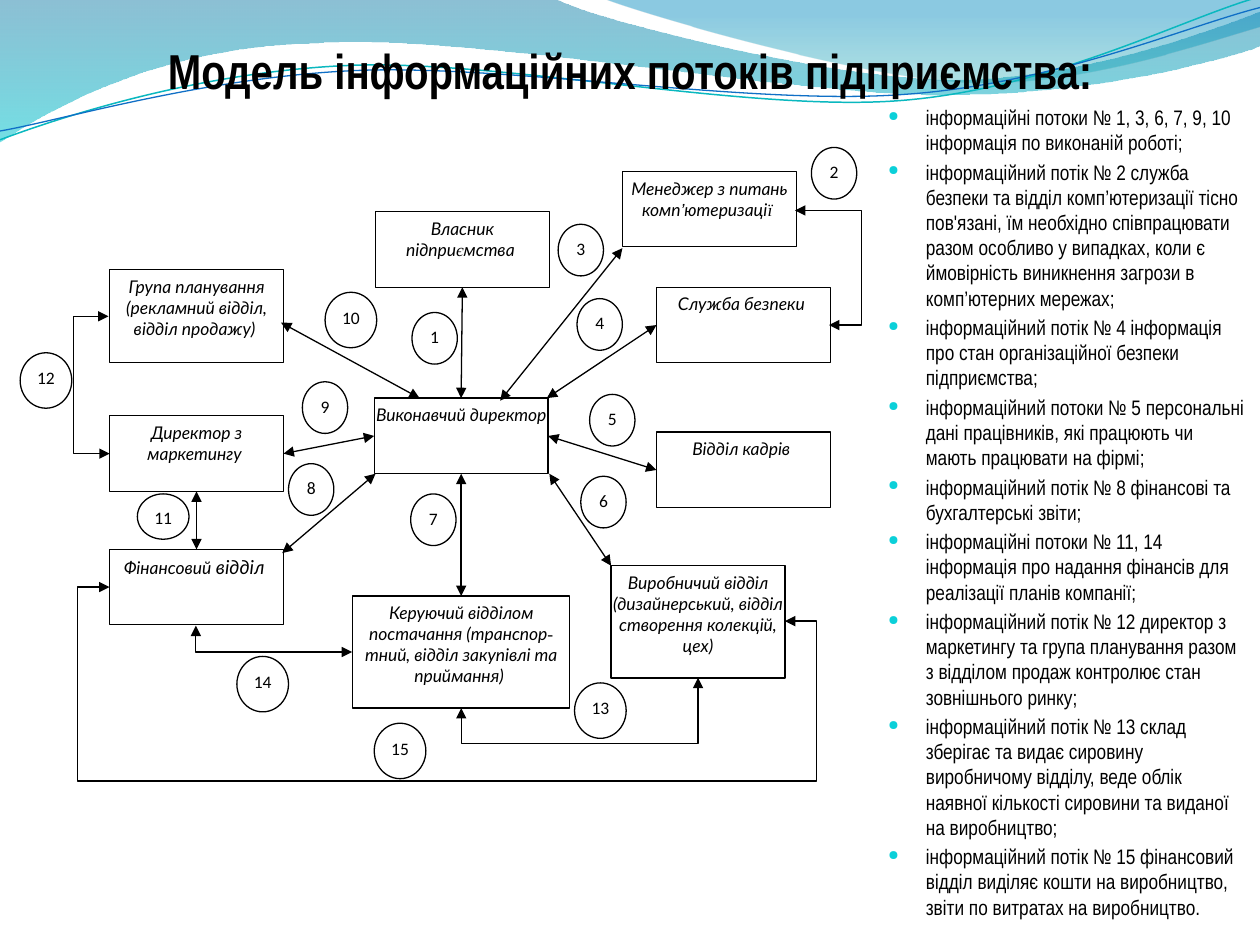
from dataclasses import dataclass
from typing import Union

from pptx import Presentation
from pptx.dml.color import RGBColor
from pptx.enum.lang import MSO_LANGUAGE_ID as Language
from pptx.enum.shapes import MSO_CONNECTOR as Link, MSO_SHAPE as Preset
from pptx.enum.text import MSO_ANCHOR as Anchor, PP_ALIGN as Align
from pptx.oxml.ns import qn
from pptx.oxml.xmlchemy import OxmlElement
from pptx.util import Inches, Pt

BLACK, WHITE = "000000", "FFFFFF"
TOP, LEFT, BOTTOM, RIGHT = range(4)


@dataclass
class Span:
    text: str
    font: str = "Lato"
    size: float = 10


@dataclass
class Unit:
    left: float
    top: float
    spans: list
    width: float = 1.38
    height: float = 0.6


@dataclass
class Elbow:
    left: float
    top: float
    width: float
    height: float
    rotation: int
    flips: str
    preset: str
    bends: tuple = ()


@dataclass
class Wave:
    start: tuple
    segments: list
    line: str = ""
    weight: float = 0
    stops: tuple = ()


End = Union[tuple[str, int], tuple[float, float]]

WAVES = [
    Wave((0, 0), [(4.4, -0.01), (4.76, 0.17, 6.64, 0.63, 7.58, 0.63), (8.53, 0.63, 9.58, 0.26, 10, 0.09),
                  (10.01, 0.36), (9.83, 0.44, 8.7, 0.76, 7.46, 0.75), (6.22, 0.75, 3.82, 0.28, 2.57, 0.34),
                  (1.29, 0.36, 0.46, 0.83, -0.01, 1.13)],
         stops=((0, "0074A1", 45), (1, "00C6CF", 55))),
    Wave((4.79, -0.01), [(5.09, 0.11, 6.82, 0.62, 7.69, 0.65), (8.56, 0.69, 9.61, 0.32, 10, 0.21), (10, 0)],
         stops=((0.2, "008BBF", 45), (1, "00A1A9", 30))),
    Wave((0, 1.11), [(0.48, 0.93, 1.58, 0.57, 2.77, 0.52), (3.95, 0.47, 5.93, 0.89, 7.13, 0.8),
                     (8.33, 0.71, 9.38, 0.15, 9.98, -0.02)], "0AB8BF", 0.85),
    Wave((0, 1.04), [(0.47, 0.96, 1.64, 0.61, 2.83, 0.56), (4.03, 0.51, 5.97, 0.84, 7.17, 0.75),
                     (8.36, 0.67, 9.41, 0.21, 10, 0.06)], "0F6FC6", 0.75),
]
UNITS = {
    "computing": Unit(4.94, 1.36, [Span("Менеджер з питань комп"), Span("’", "Arial"), Span("ютеризаці"),
                                   Span("ї ", "Times New Roman")]),
    "production": Unit(4.85, 4.49, [Span("Виробничий відділ (дизайнерський, відділ створення колекцій, цех)")],
                       height=0.89),
    "executive": Unit(2.97, 3.16, [Span("Виконавчий директор ")]),
    "owner": Unit(2.98, 1.68, [Span("Власник підпри"), Span("є", "Times New Roman"), Span("мства ")]),
    "security": Unit(5.21, 2.28, [Span("Служба безпеки ")]),
    "supply": Unit(2.8, 4.73, [Span("Керуючий відділом постачання (транспор"), Span("-", "Times New Roman"),
                               Span("тний, відділ закупівлі та приймання) ")], 1.72, 0.89),
    "staff": Unit(5.21, 3.43, [Span("Відділ кадрів ")]),
    "finance": Unit(0.87, 4.36, [Span("Фінансовий"), Span(" відділ ", size=11)]),
    "marketing": Unit(0.87, 3.3, [Span("Директор з маркетингу ")]),
    "planning": Unit(0.87, 2.14, [Span("Група планування (рекламний відділ, відділ продажу) ")], height=0.74),
}
FLOWS: list[tuple[End, End]] = [
    (("owner", BOTTOM), ("executive", TOP)),
    (("marketing", RIGHT), ("executive", LEFT)),
    ((2.23, 2.56), (3.33, 3.16)),
    ((2.98, 3.76), (2.24, 4.39)),
    (("executive", BOTTOM), ("supply", TOP)),
    ((4.36, 3.76), (4.85, 4.49)),
    (("staff", LEFT), ("executive", RIGHT)),
    ((4.94, 1.97), (3.97, 3.18)),
    (("security", LEFT), (4.34, 3.16)),
    (("marketing", BOTTOM), ("finance", TOP)),
]
ELBOWS = [
    Elbow(6.31, 1.67, 0.27, 0.91, 0, "", "bentConnector3", (0.53 / 0.27,)),
    Elbow(0.86, 2.51, 0.01, 1.09, 180, "HV", "bentConnector3", (-28,)),
    Elbow(4.48, 4.56, 0.24, 1.88, 90, "HV", "bentConnector3", (-0.28 / 0.24,)),
    Elbow(2.07, 4.45, 0.21, 1.24, 270, "H", "bentConnector2"),
    Elbow(0.87, 4.66, 5.36, 0.27, 0, "HV", "bentConnector5", (-0.25 / 5.36, -1.27 / 0.27, 1 + 0.25 / 5.36)),
]
NUMBER_PLACES = [(3.27, 2.48), (6.44, 1.17), (4.43, 1.78), (4.58, 2.37), (4.68, 3.13), (4.61, 3.78), (3.26, 3.92),
                 (2.29, 3.68), (2.4, 3.03), (2.58, 2.32), (1.09, 3.92), (0.16, 2.8), (4.56, 5.42), (1.88, 5.21),
                 (2.97, 5.74)]
NOTES = [
    "інформаційні потоки № 1, 3, 6, 7, 9, 10 інформація по виконаній роботі;",
    "інформаційний потік № 2 служба безпеки та відділ комп’ютеризації тісно пов'язані, їм необхідно "
    "співпрацювати разом особливо у випадках, коли є ймовірність виникнення загрози в комп’ютерних мережах;",
    "інформаційний потік № 4 інформація про стан організаційної безпеки підприємства;",
    "інформаційний потоки № 5 персональні дані працівників, які працюють чи мають працювати на фірмі;",
    "інформаційний потік № 8 фінансові та бухгалтерські звіти;",
    "інформаційні потоки № 11, 14 інформація про надання фінансів для реалізації планів компанії;",
    "інформаційний потік № 12 директор з маркетингу та група планування разом з відділом продаж контролює "
    "стан зовнішнього ринку;",
    "інформаційний потік № 13 склад зберігає та видає сировину виробничому відділу, веде облік наявної "
    "кількості сировини та виданої на виробництво;",
    "інформаційний потік № 15 фінансовий відділ виділяє кошти на виробництво, звіти по витратах на виробництво.",
]


def color(value: str) -> RGBColor:
    return RGBColor.from_string(value)


def add_child(parent, tag: str, **attributes):
    child = OxmlElement(tag)
    for name, value in attributes.items():
        child.set(name, str(value))
    parent.append(child)
    return child


def set_frame(frame, sides: float, bottom: float = 0.05, anchor=Anchor.TOP) -> None:
    frame.word_wrap, frame.vertical_anchor = True, anchor
    frame.margin_left = frame.margin_right = Inches(sides)
    frame.margin_top, frame.margin_bottom = Inches(0.05), Inches(bottom)


def write(para, text: str, *, font: str, size: float, bold=False, italic=False, align=Align.CENTER) -> None:
    para.alignment = align
    span = para.add_run()
    span.text = text
    span.font.name, span.font.size = font, Pt(size)
    span.font.bold, span.font.italic = bold, italic
    span.font.color.rgb = color(BLACK)
    span.font.language_id = Language.UKRAINIAN


def bend_outline(shape, segments: list) -> None:
    sides = list(shape.element.spPr.iter(qn("a:lnTo")))
    for segment in segments:
        count = len(segment) // 2
        group, sides = sides[:count], sides[count:]
        if count == 3:
            bezier = OxmlElement("a:cubicBezTo")
            group[0].addprevious(bezier)
            for side in group:
                bezier.append(side[0])
                side.getparent().remove(side)


def draw_wave(page, wave: Wave) -> None:
    points = [(Inches(part[i]), Inches(part[i + 1])) for part in wave.segments for i in range(0, len(part), 2)]
    builder = page.shapes.build_freeform(Inches(wave.start[0]), Inches(wave.start[1]))
    builder.add_line_segments(points, close=bool(wave.stops))
    shape = builder.convert_to_shape()
    bend_outline(shape, wave.segments)
    shape.shadow.inherit = False
    if wave.line:
        shape.fill.background()
        shape.line.color.rgb, shape.line.width = color(wave.line), Pt(wave.weight)
        return
    shape.line.fill.background()
    shape.fill.gradient()
    shape.fill.gradient_angle = 270
    for stop, (position, shade, _) in zip(shape.fill.gradient_stops, wave.stops):
        stop.position, stop.color.rgb = position, color(shade)
    for tone, (_, _, opacity) in zip(shape.element.spPr.iter(qn("a:srgbClr")), wave.stops):
        add_child(tone, "a:alpha", val=opacity * 1000)


def draw_box(page, preset, left: float, top: float, width: float, height: float):
    box = page.shapes.add_shape(preset, Inches(left), Inches(top), Inches(width), Inches(height))
    box.shadow.inherit = False
    box.fill.solid()
    box.fill.fore_color.rgb = color(WHITE)
    box.line.color.rgb, box.line.width = color(BLACK), Pt(0.75)
    set_frame(box.text_frame, 0)
    return box


def draw_arrow(page, kind, start: tuple, end: tuple):
    arrow = page.shapes.add_connector(kind, *map(Inches, start + end))
    arrow.line.color.rgb, arrow.line.width = color(BLACK), Pt(0.75)
    properties = arrow.element.spPr
    for tag in ("a:headEnd", "a:tailEnd"):
        add_child(properties.find(qn("a:ln")), tag, type="triangle")
    add_child(properties, "a:effectLst")
    return arrow


def draw_flow(page, boxes: dict, start: End, end: End) -> None:
    places = [(0, 0) if place[0] in boxes else place for place in (start, end)]
    arrow = draw_arrow(page, Link.STRAIGHT, *places)
    for place, join in ((start, arrow.begin_connect), (end, arrow.end_connect)):
        if place[0] in boxes:
            join(boxes[place[0]], place[1])


def draw_elbow(page, elbow: Elbow) -> None:
    corner = (elbow.left + elbow.width, elbow.top + elbow.height)
    properties = draw_arrow(page, Link.ELBOW, (elbow.left, elbow.top), corner).element.spPr
    transform, geometry = properties.find(qn("a:xfrm")), properties.find(qn("a:prstGeom"))
    transform.set("rot", str(elbow.rotation * 60000))
    for axis in elbow.flips:
        transform.set(f"flip{axis}", "1")
    geometry.set("prst", elbow.preset)
    for index, bend in enumerate(elbow.bends, 1):
        name = "adj1" if len(elbow.bends) == 1 else f"adj{index}"
        add_child(geometry.find(qn("a:avLst")), "a:gd", name=name, fmla=f"val {round(bend * 100000)}")


def draw_number(page, number: int, left: float, top: float) -> None:
    width, height = (0.36, 0.41) if number < 10 else (0.41, 0.36 if number == 11 else 0.44)
    para = draw_box(page, Preset.OVAL, left, top, width, height).text_frame.paragraphs[0]
    para.space_after = Pt(10)
    write(para, str(number), font="Calibri", size=10)


def draw_notes(page) -> None:
    frame = page.shapes.add_textbox(Inches(6.95), Inches(0.78), Inches(3.05), Inches(6.56)).text_frame
    set_frame(frame, 0.1)
    for index, note in enumerate(NOTES):
        para = frame.add_paragraph() if index else frame.paragraphs[0]
        write(para, note, font="Arial Narrow", size=12, align=Align.LEFT)
        para.space_before = Pt(2.4)
        properties = para._p.get_or_add_pPr()
        properties.set("marL", str(Inches(0.3)))
        properties.set("indent", str(Inches(-0.3)))
        add_child(add_child(properties, "a:buClr"), "a:srgbClr", val="0BD0D9")
        add_child(properties, "a:buSzPct", val=65000)
        add_child(properties, "a:buChar", char="●")


def main() -> None:
    """Build the slide on the information flows of an enterprise."""
    deck = Presentation()
    deck.slide_width, deck.slide_height = Inches(10), Inches(7.5)
    page = deck.slides.add_slide(deck.slide_layouts[6])
    for wave in WAVES:
        draw_wave(page, wave)
    title = page.shapes.add_textbox(Inches(0.5), 0, Inches(9), Inches(0.79)).text_frame
    set_frame(title, 0, bottom=0, anchor=Anchor.BOTTOM)
    write(title.paragraphs[0], "Модель інформаційних потоків підприємства:", font="Arial Narrow", size=28, bold=True)
    boxes = {}
    for name, unit in UNITS.items():
        boxes[name] = draw_box(page, Preset.RECTANGLE, unit.left, unit.top, unit.width, unit.height)
        for span in unit.spans:
            write(boxes[name].text_frame.paragraphs[0], span.text, font=span.font, size=span.size, italic=True)
    for start, end in FLOWS:
        draw_flow(page, boxes, start, end)
    for elbow in ELBOWS:
        draw_elbow(page, elbow)
    for number, place in enumerate(NUMBER_PLACES, 1):
        draw_number(page, number, *place)
    draw_notes(page)
    deck.save("out.pptx")


if __name__ == "__main__":
    main()
